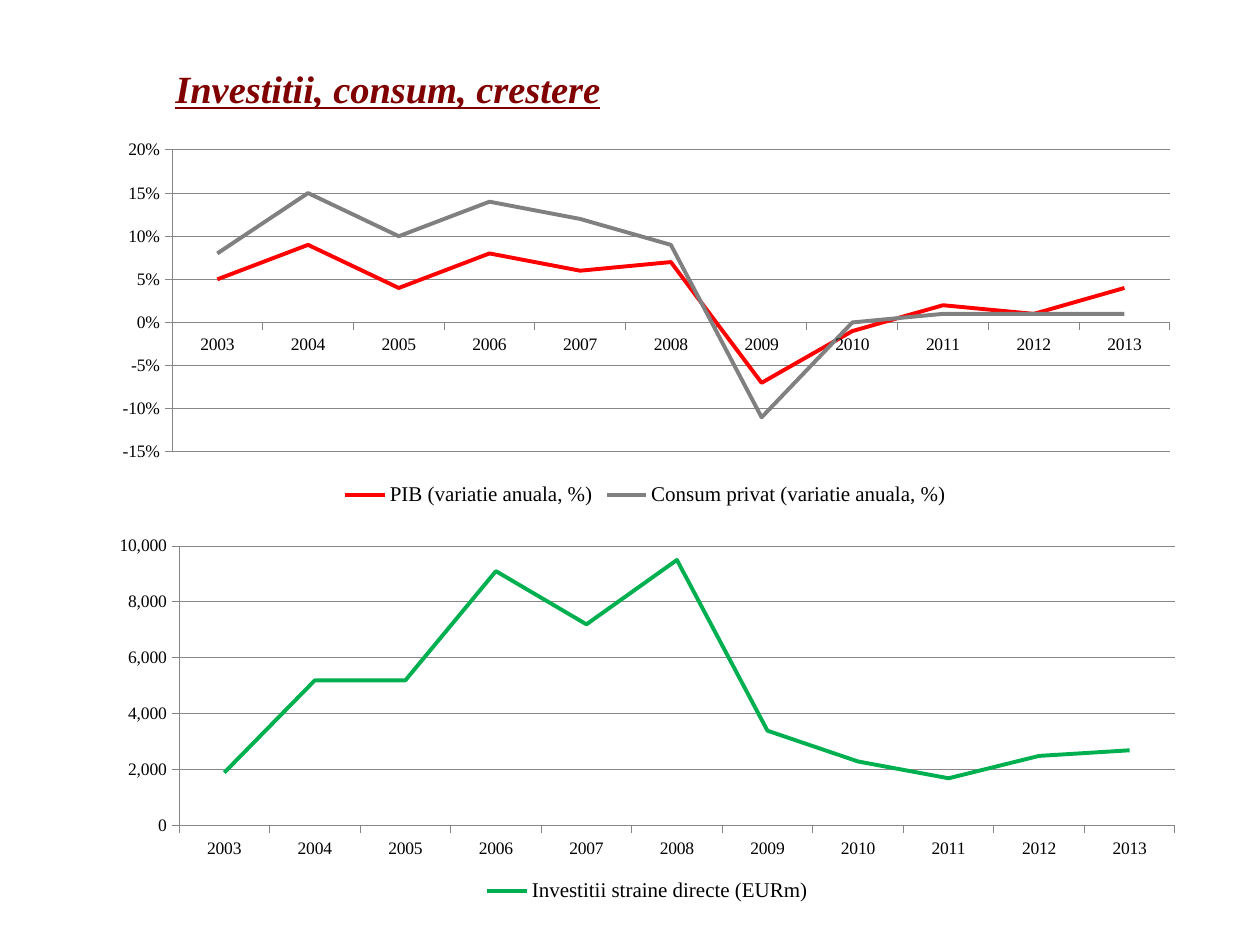
from dataclasses import dataclass

from lxml import etree
from pptx import Presentation
from pptx.chart.data import CategoryChartData
from pptx.dml.color import RGBColor
from pptx.enum.chart import XL_CHART_TYPE, XL_LEGEND_POSITION, XL_TICK_LABEL_POSITION, XL_TICK_MARK
from pptx.oxml.ns import qn
from pptx.util import Pt

LINE = XL_CHART_TYPE.LINE
LEGEND_BOTTOM = XL_LEGEND_POSITION.BOTTOM
LABELS_NEXT_TO_AXIS = XL_TICK_LABEL_POSITION.NEXT_TO_AXIS
TICK_OUTSIDE = XL_TICK_MARK.OUTSIDE
TICK_NONE = XL_TICK_MARK.NONE

SCALE = 914400 / 126
YEARS = [str(year) for year in range(2003, 2014)]


@dataclass(frozen=True)
class Theme:
    font: str = "Times New Roman"
    title_size: int = 22
    axis_size: int = 10
    legend_size: int = 12
    line_width: float = 2.25
    rule_width: float = 0.5
    title: str = "800000"
    text: str = "000000"
    rule: str = "868686"
    output: str = "FF0000"
    consumption: str = "808080"
    investment: str = "00B050"


THEME = Theme()


def emu(px):
    return round(px * SCALE)


def color(value):
    return RGBColor.from_string(value)


def set_attributes(target, values):
    for name, value in values.items():
        setattr(target, name, value)


def format_font(font, size, value, **extra):
    set_attributes(font, {"name": THEME.font, "size": Pt(size), **extra})
    font.color.rgb = color(value)


def format_line(line, value, width):
    line.color.rgb = color(value)
    line.width = Pt(width)


def place_plot(chart, box, plot_box):
    plot_area = chart.plots[0]._element.getparent()
    for layout in plot_area.findall(qn("c:layout")):
        plot_area.remove(layout)
    layout = etree.Element(qn("c:layout"))
    plot_area.insert(0, layout)
    manual = etree.SubElement(layout, qn("c:manualLayout"))
    left, top, width, height = plot_box
    settings = {
        "layoutTarget": "inner", "xMode": "edge", "yMode": "edge",
        "x": left / box[2], "y": top / box[3],
        "w": width / box[2], "h": height / box[3],
    }
    for name, value in settings.items():
        etree.SubElement(manual, qn(f"c:{name}")).set("val", str(value))


def add_title(slide, box, text):
    shape = slide.shapes.add_textbox(*map(emu, box))
    shape.text_frame.word_wrap = True
    run = shape.text_frame.paragraphs[0].add_run()
    run.text = text
    format_font(run.font, THEME.title_size, THEME.title, bold=True, italic=True, underline=True)


def add_line_chart(slide, box, plot_box, series, value_axis, number_format):
    data = CategoryChartData(number_format=number_format)
    data.categories = YEARS
    for name, values, _ in series:
        data.add_series(name, values)
    chart = slide.shapes.add_chart(LINE, *map(emu, box), data).chart
    chart.has_title = False
    format_font(chart.font, THEME.axis_size, THEME.text)
    chart.plots[0].vary_by_categories = False
    for line, (_, _, value) in zip(chart.plots[0].series, series):
        line.smooth = False
        format_line(line.format.line, value, THEME.line_width)

    axis_format = {
        "major_tick_mark": TICK_OUTSIDE,
        "minor_tick_mark": TICK_NONE,
        "tick_label_position": LABELS_NEXT_TO_AXIS,
    }
    for axis in (chart.category_axis, chart.value_axis):
        set_attributes(axis, axis_format)
        format_line(axis.format.line, THEME.rule, THEME.rule_width)
    set_attributes(chart.value_axis, {"has_major_gridlines": True, **value_axis})
    format_line(chart.value_axis.major_gridlines.format.line, THEME.rule, THEME.rule_width)
    set_attributes(chart.value_axis.tick_labels,
                   {"number_format": number_format, "number_format_is_linked": False})

    chart.has_legend = True
    set_attributes(chart.legend, {"position": LEGEND_BOTTOM, "include_in_layout": False})
    format_font(chart.legend.font, THEME.legend_size, THEME.text)
    place_plot(chart, box, plot_box)


def main():
    presentation = Presentation()
    set_attributes(presentation, {"slide_width": emu(1260), "slide_height": emu(945)})
    slide = presentation.slides.add_slide(presentation.slide_layouts[6])

    growth = [
        ("PIB (variatie anuala, %)",
         [0.05, 0.09, 0.04, 0.08, 0.06, 0.07, -0.07, -0.01, 0.02, 0.01, 0.04],
         THEME.output),
        ("Consum privat (variatie anuala, %)",
         [0.08, 0.15, 0.1, 0.14, 0.12, 0.09, -0.11, 0, 0.01, 0.01, 0.01],
         THEME.consumption),
    ]
    investment = [
        ("Investitii straine directe (EURm)",
         [1900, 5200, 5200, 9100, 7200, 9500, 3400, 2300, 1700, 2500, 2700],
         THEME.investment),
    ]
    add_line_chart(
        slide, (100, 133, 1091, 378), (72, 17, 998, 302), growth,
        {"minimum_scale": -0.15, "maximum_scale": 0.2, "major_unit": 0.05}, "0%")
    add_line_chart(
        slide, (98, 529, 1099, 378), (81, 17, 996, 280), investment,
        {"minimum_scale": 0, "maximum_scale": 10000, "major_unit": 2000}, "#,##0")
    add_title(slide, (163, 59, 988, 59), "Investitii, consum, crestere")
    presentation.save("out.pptx")


if __name__ == "__main__":
    main()
